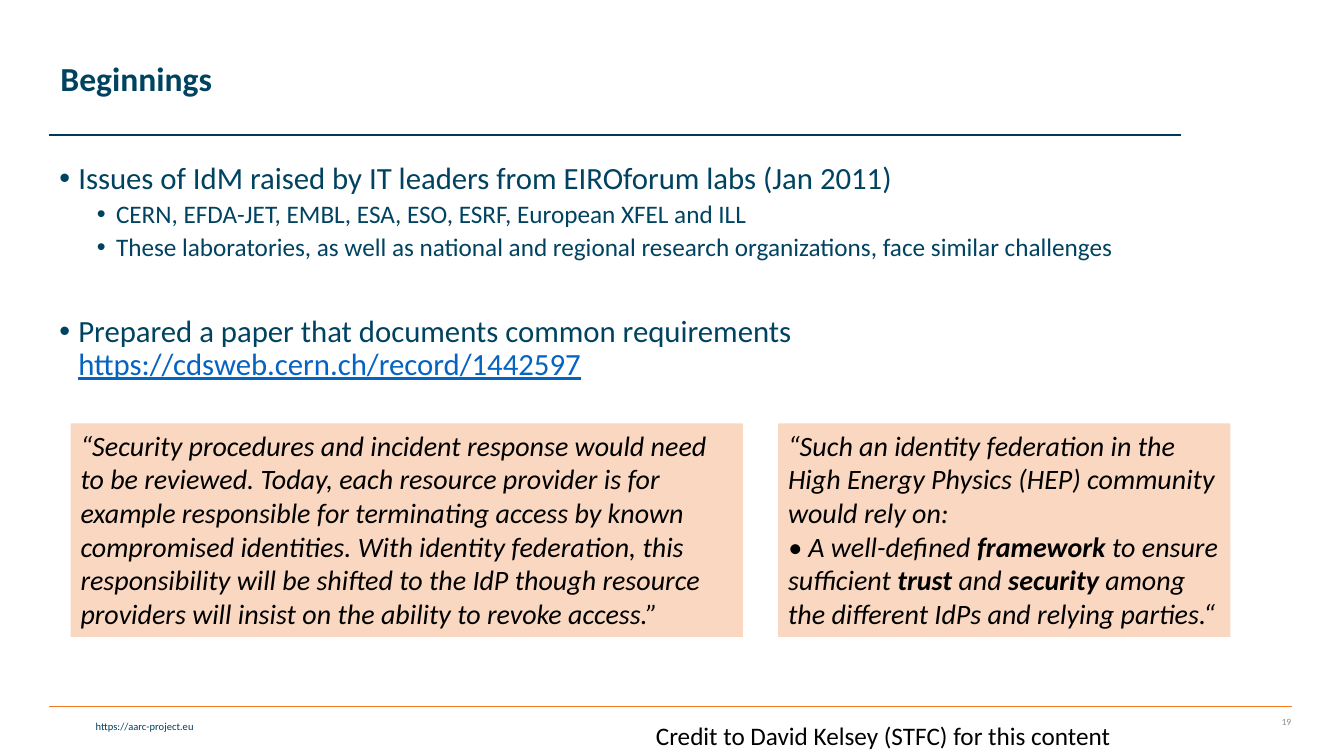
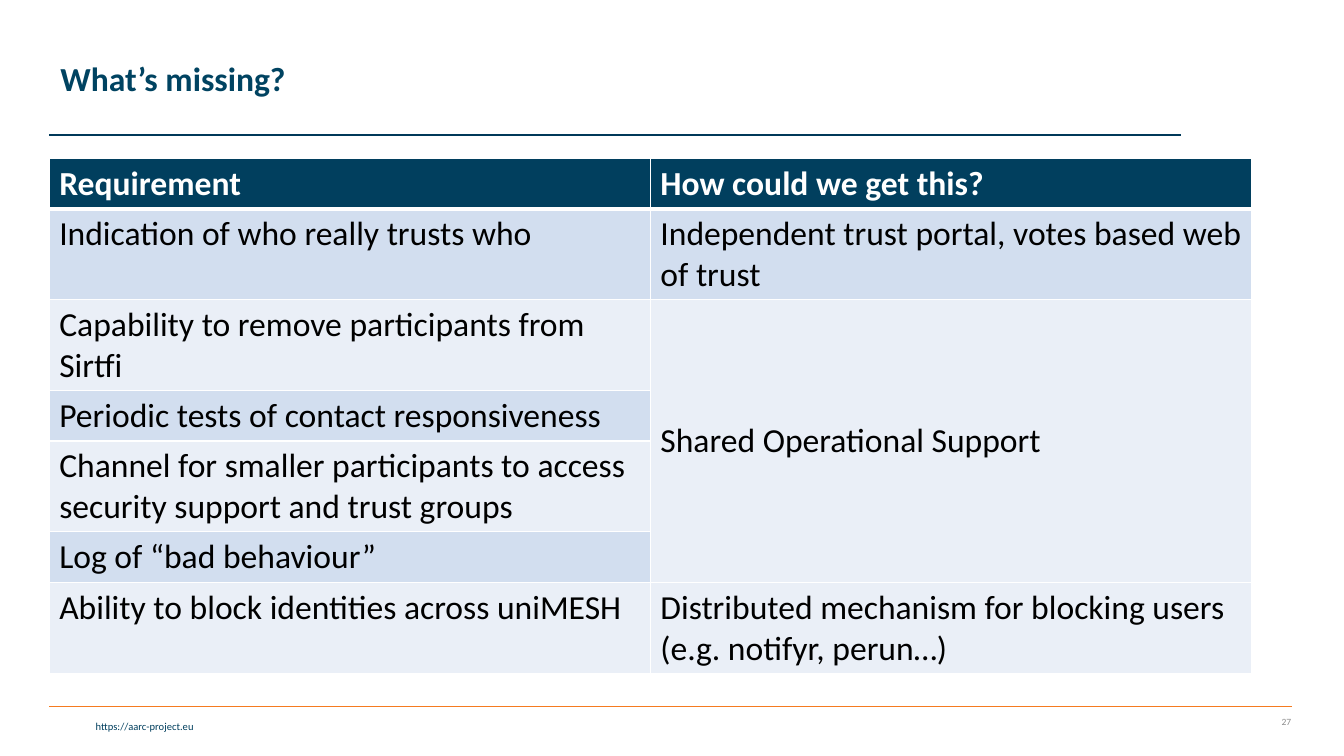
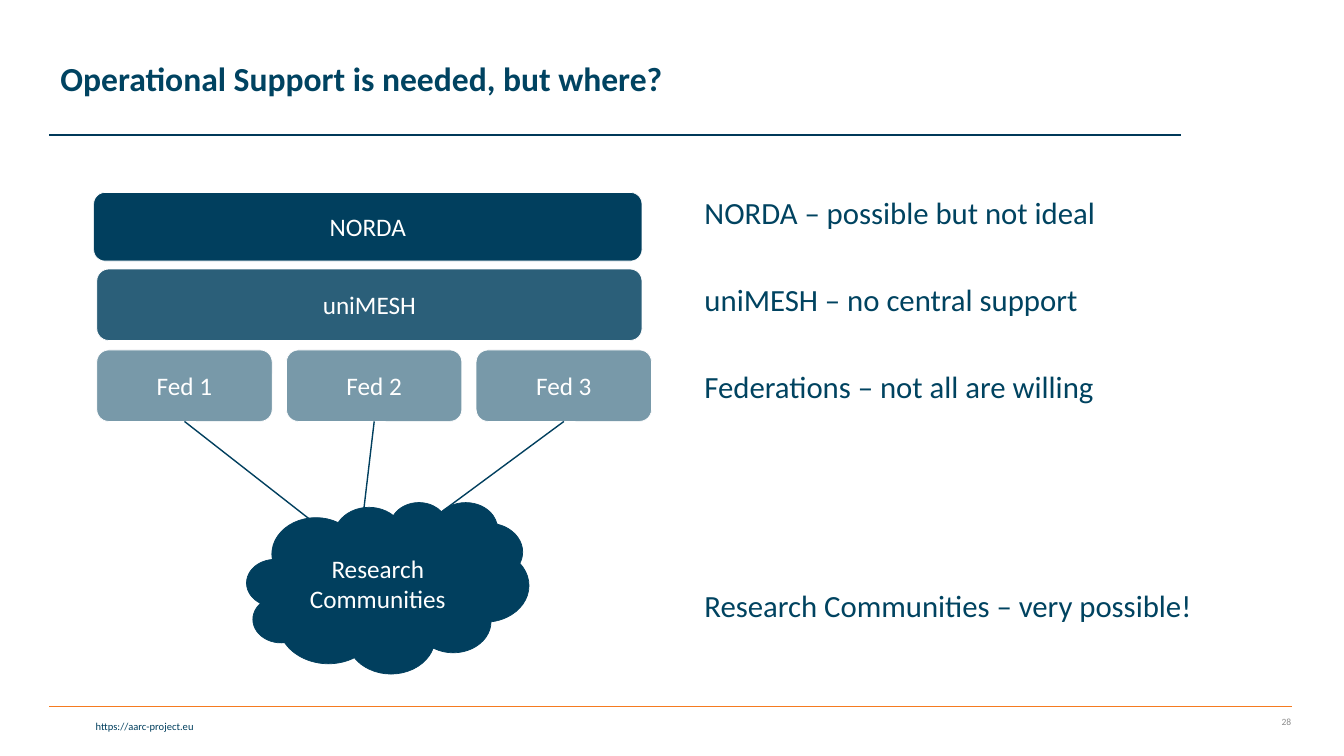
from lxml.etree import SubElement
from pptx import Presentation
from pptx.dml.color import RGBColor
from pptx.enum.shapes import MSO_CONNECTOR, MSO_SHAPE
from pptx.enum.text import MSO_ANCHOR, MSO_AUTO_SIZE, PP_ALIGN
from pptx.oxml.ns import qn
from pptx.util import Cm, Pt

FONT = "Calibri"
WHITE = RGBColor(0xFF, 0xFF, 0xFF)
BLACK = RGBColor(0x00, 0x00, 0x00)
NAVY = RGBColor(0x01, 0x3F, 0x5E)
TITLE_NAVY = RGBColor(0x00, 0x43, 0x61)
BODY_NAVY = RGBColor(0x00, 0x43, 0x60)
RULE_NAVY = RGBColor(0x00, 0x39, 0x59)
ORANGE = RGBColor(0xF5, 0x7B, 0x20)
QUOTE_ORANGE = RGBColor(0xED, 0x7D, 0x31)
LINK_BLUE = RGBColor(0x05, 0x63, 0xC1)
GREY = RGBColor(0x8C, 0x8C, 0x8C)
BANDS = [RGBColor(0xEA, 0xEF, 0xF7), RGBColor(0xD2, 0xDE, 0xEF)]

LEFT, CONTENT_TOP, CONTENT_WIDTH = 1.24, 3.99, 30.3
BODY_SIZE, SUB_SIZE = 22, 18


def gap(lines):
    """Space before a body paragraph set apart by a number of line heights."""
    return 7.5 + 31.2 * lines


def add_run(paragraph, text, size, color, bold=False, italic=False, underline=False):
    run = paragraph.add_run()
    run.text = text
    font = run.font
    font.name, font.size, font.color.rgb = FONT, Pt(size), color
    font.bold, font.italic, font.underline = bold, italic, underline


def place(shape, left, top, width, height):
    shape.left, shape.top = Cm(left), Cm(top)
    shape.width, shape.height = Cm(width), Cm(height)


def add_label(slide, box, text, size, color, align=PP_ALIGN.LEFT,
              anchor=MSO_ANCHOR.TOP, wrap=True):
    frame = slide.shapes.add_textbox(*map(Cm, box)).text_frame
    frame.word_wrap, frame.vertical_anchor = wrap, anchor
    frame.paragraphs[0].alignment = align
    add_run(frame.paragraphs[0], text, size, color)


def add_line(slide, start, end, color, arrow=False):
    line = slide.shapes.add_connector(MSO_CONNECTOR.STRAIGHT, *map(Cm, start + end))
    line.line.color.rgb, line.line.width = color, Pt(1)
    properties = line.element.spPr
    if arrow:
        SubElement(properties.find(qn("a:ln")), qn("a:tailEnd"), type="arrow")
    SubElement(properties, qn("a:effectLst"))
    return line


def add_panel(slide, kind, box, fill, opacity=100, outline=None):
    panel = slide.shapes.add_shape(kind, *map(Cm, box))
    panel.shadow.inherit = False
    panel.fill.solid()
    panel.fill.fore_color.rgb = fill
    if opacity < 100:
        tint = panel.element.spPr.find(qn("a:solidFill"))[0]
        SubElement(tint, qn("a:alpha"), val=str(opacity * 1000))
    if outline is None:
        panel.line.fill.background()
    else:
        panel.line.color.rgb, panel.line.width = outline, Pt(0.5)
    panel.text_frame.word_wrap = True
    return panel


def add_page(deck, title, number, has_body=True):
    """Add a slide with the shared title, rules and footer."""
    slide = deck.slides.add_slide(deck.slide_layouts[1 if has_body else 5])
    heading = slide.shapes.title
    place(heading, 1.27, 0.2, 26.7, 3.68)
    frame = heading.text_frame
    frame.vertical_anchor, frame.auto_size = MSO_ANCHOR.MIDDLE, MSO_AUTO_SIZE.NONE
    paragraph = frame.paragraphs[0]
    paragraph.alignment, paragraph.line_spacing = PP_ALIGN.LEFT, 0.9
    add_run(paragraph, title, 24, TITLE_NAVY, bold=True)

    add_line(slide, (LEFT, 3.4), (29.77, 3.4), RULE_NAVY)
    add_line(slide, (LEFT, 17.81), (32.56, 17.81), ORANGE)
    add_label(slide, (0.08, 18.01, 5.05, 0.58), "https://aarc-project.eu",
              7.5, NAVY, PP_ALIGN.RIGHT)
    add_label(slide, (30.73, 17.81, 2.06, 0.76), str(number), 6.8, GREY,
              PP_ALIGN.RIGHT, MSO_ANCHOR.MIDDLE)
    return slide


def fill_body(slide, box, items, bulleted):
    """Fill the body from (level, space before, [(text, colour, underline)])."""
    body = slide.placeholders[1]
    place(body, *box)
    frame = body.text_frame
    frame.auto_size = MSO_AUTO_SIZE.NONE
    for index, (level, space, runs) in enumerate(items):
        paragraph = frame.add_paragraph() if index else frame.paragraphs[0]
        paragraph.level = level
        properties = paragraph._p.get_or_add_pPr()
        hang = Cm(0.48) if bulleted else 0
        properties.set("marL", str(hang + level * Cm(0.95)))
        properties.set("indent", str(-hang))
        if bulleted:
            SubElement(properties, qn("a:buFont"), typeface="Arial")
            SubElement(properties, qn("a:buChar"), char="•")
        else:
            SubElement(properties, qn("a:buNone"))
        paragraph.line_spacing, paragraph.space_before = 0.9, Pt(space)
        for text, color, underline in runs:
            add_run(paragraph, text, SUB_SIZE if level else BODY_SIZE, color,
                    underline=underline)


def add_quote(slide, box, paragraphs):
    """Add a tinted quotation; each paragraph is a list of (text, bold)."""
    frame = add_panel(slide, MSO_SHAPE.RECTANGLE, box, QUOTE_ORANGE, 30).text_frame
    frame.vertical_anchor = MSO_ANCHOR.TOP
    for index, runs in enumerate(paragraphs):
        paragraph = frame.add_paragraph() if index else frame.paragraphs[0]
        paragraph.alignment = PP_ALIGN.LEFT
        for text, bold in runs:
            add_run(paragraph, text, 20, BLACK, bold=bold, italic=True)


def set_borders(cell, bottom, top):
    properties = cell._tc.get_or_add_tcPr()
    for side, width in (("L", 1), ("R", 1), ("T", top), ("B", bottom)):
        line = SubElement(properties, qn(f"a:ln{side}"), w=str(Pt(width)))
        fill = SubElement(line, qn("a:solidFill"))
        SubElement(fill, qn("a:srgbClr"), val=str(WHITE))


def add_requirements(slide, box, rows, heights, merged_rows):
    table = slide.shapes.add_table(len(rows), 2, *map(Cm, box)).table
    for column in table.columns:
        column.width = Cm(box[2] / 2)
    for r, (texts, height) in enumerate(zip(rows, heights)):
        table.rows[r].height = Cm(height)
        for c, text in enumerate(texts):
            cell = table.cell(r, c)
            set_borders(cell, bottom=1 if r else 3, top=3 if r == 1 else 1)
            cell.fill.solid()
            cell.fill.fore_color.rgb = BANDS[r % 2] if r else NAVY
            if c and r >= merged_rows[0]:
                cell.vertical_anchor = MSO_ANCHOR.MIDDLE
            if text:
                add_run(cell.text_frame.paragraphs[0], text, 24,
                        BLACK if r else WHITE, bold=r == 0)
    first, last = merged_rows
    table.cell(first, 1).merge(table.cell(last, 1))


def add_support_layers(slide, left, top):
    """Draw the stacked service layers and the communities they serve."""
    def layer(kind, box, text, opacity=100, outline=WHITE):
        x, y, width, height = box
        panel = add_panel(slide, kind, (left + x, top + y, width, height),
                          NAVY, opacity, outline)
        frame = panel.text_frame
        frame.vertical_anchor = MSO_ANCHOR.MIDDLE
        frame.paragraphs[0].alignment = PP_ALIGN.CENTER
        add_run(frame.paragraphs[0], text, 18, WHITE)
        return panel

    rounded = MSO_SHAPE.ROUNDED_RECTANGLE
    layer(rounded, (0, 0, 13.82, 1.73), "NORDA")
    layer(rounded, (0.08, 1.93, 13.74, 1.8), "uniMESH", 83)
    for index, (x, y) in enumerate([(6.45, 9.02), (6.71, 8.82), (7.14, 9.25)]):
        federation = layer(rounded, (0.08 + 4.78 * index, 3.97, 4.42, 1.8),
                           f"Fed {index + 1}", 53)
        arrow = add_line(slide, (left, top), (left + x, top + y), NAVY, arrow=True)
        arrow.begin_connect(federation, 2)
    layer(MSO_SHAPE.CLOUD, (3.86, 7.8, 7.11, 4.32), "Research Communities",
          outline=NAVY)


def build_beginnings(deck):
    slide = add_page(deck, "Beginnings", 19)
    fill_body(slide, (LEFT, CONTENT_TOP, CONTENT_WIDTH, 13.16), [
        (0, 0, [("Issues of IdM raised by IT leaders from EIROforum labs (Jan 2011)",
                 BODY_NAVY, False)]),
        (1, 3.8, [("CERN, EFDA-JET, EMBL, ESA, ESO, ESRF, European XFEL and ILL",
                   TITLE_NAVY, False)]),
        (1, 3.8, [("These laboratories, as well as national and regional research "
                   "organizations, face similar challenges", TITLE_NAVY, False)]),
        (0, gap(1), [("Prepared a paper that documents common requirements ",
                      BODY_NAVY, False),
                     ("https://cdsweb.cern.ch/record/1442597", LINK_BLUE, True)]),
    ], bulleted=True)
    add_label(slide, (16.28, 18.03, 12.17, 1.02),
              "Credit to David Kelsey (STFC) for this content", 18, BLACK, wrap=False)
    add_quote(slide, (19.61, 10.67, 11.4, 5.38), [
        [("“Such an identity federation in the High Energy Physics (HEP) "
          "community would rely on:", False)],
        [("• A well-defined ", False), ("framework", True),
         (" to ensure sufficient ", False), ("trust", True), (" and ", False),
         ("security", True),
         (" among the different IdPs and relying parties.“", False)],
    ])
    add_quote(slide, (1.78, 10.67, 16.94, 5.38), [[(
        "“Security procedures and incident response would need to be reviewed. "
        "Today, each resource provider is for example responsible for terminating "
        "access by known compromised identities. With identity federation, this "
        "responsibility will be shifted to the IdP though resource providers will "
        "insist on the ability to revoke access.”", False)]])


def build_missing(deck):
    slide = add_page(deck, "What’s missing?", 27, has_body=False)
    one_line, two_lines = 1.27, 2.29
    add_requirements(slide, (LEFT, CONTENT_TOP, CONTENT_WIDTH, 12.95), [
        ("Requirement", "How could we get this?"),
        ("Indication of who really trusts who",
         "Independent trust portal, votes based web of trust"),
        ("Capability to remove participants from Sirtfi",
         "Shared Operational Support"),
        ("Periodic tests of contact responsiveness", ""),
        ("Channel for smaller participants to access security support and "
         "trust groups", ""),
        ("Log of “bad behaviour”", ""),
        ("Ability to block identities across uniMESH",
         "Distributed mechanism for blocking users (e.g. notifyr, perun…)"),
    ], [one_line, two_lines, two_lines, one_line, two_lines, one_line, two_lines],
        merged_rows=(2, 5))


def build_support(deck):
    slide = add_page(deck, "Operational Support is needed, but where?", 28)
    verdicts = [
        (0, "NORDA – possible but not ideal"),
        (gap(1), "uniMESH – no central support"),
        (gap(1), "Federations – not all are willing"),
        (gap(4), "Research Communities – very possible!"),
    ]
    fill_body(slide, (17.5, 4.85, 14.05, 12.32),
              [(0, space, [(text, BODY_NAVY, False)]) for space, text in verdicts],
              bulleted=False)
    add_support_layers(slide, 2.36, 4.85)


def main():
    deck = Presentation()
    deck.slide_width, deck.slide_height = Cm(33.87), Cm(19.05)
    build_beginnings(deck)
    build_missing(deck)
    build_support(deck)
    deck.save("out.pptx")


if __name__ == "__main__":
    main()
